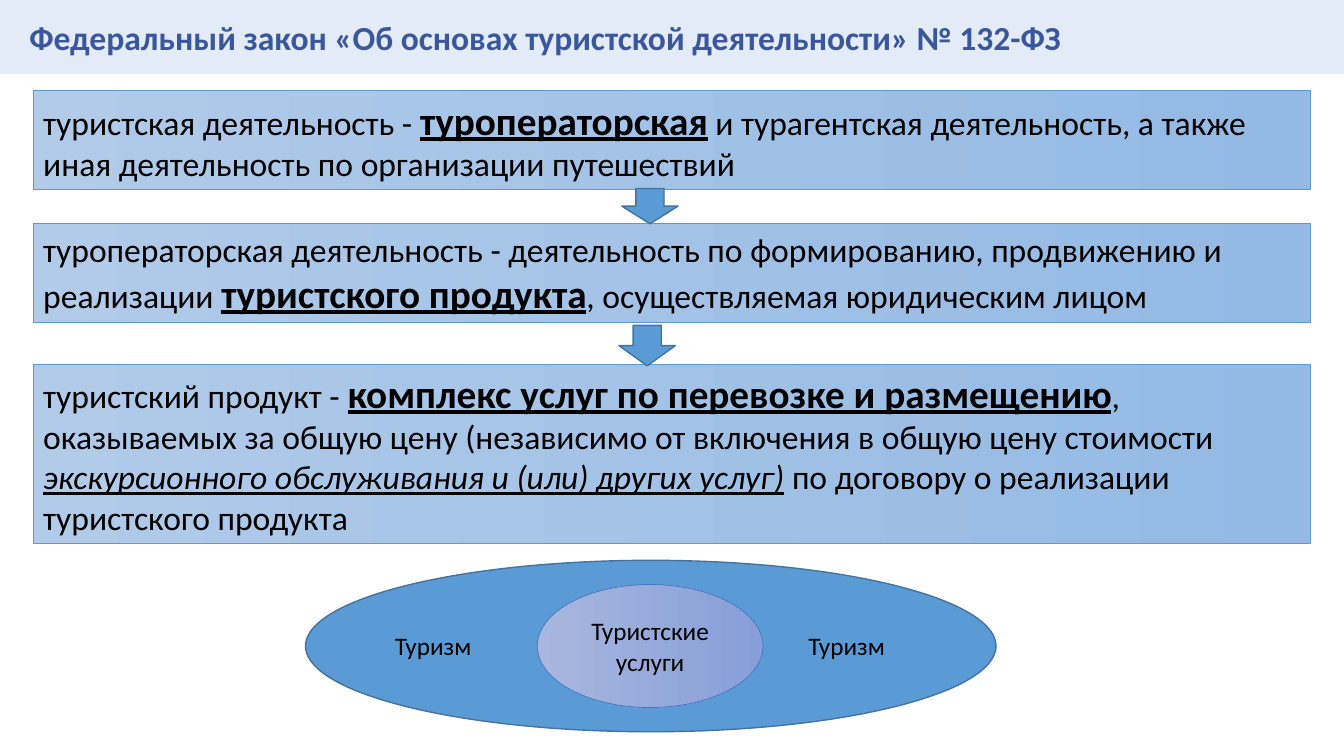
from pptx import Presentation
from pptx.dml.color import RGBColor
from pptx.enum.shapes import MSO_SHAPE
from pptx.enum.text import MSO_ANCHOR, MSO_AUTO_SIZE, PP_ALIGN
from pptx.util import Cm, Pt

# Content
TITLE = "Федеральный закон «Об основах туристской деятельности» № 132-ФЗ"
# Definitions: top, height, runs of (text, style); sizes in cm
DEFINITIONS = [
    (2.29, 2.49, [
        ("туристская деятельность - ", "plain"),
        ("туроператорская", "key"),
        (" и турагентская деятельность, а также иная деятельность "
         "по организации путешествий", "plain")]),
    (5.64, 2.49, [
        ("туроператорская деятельность - деятельность по формированию, "
         "продвижению и реализации ", "plain"),
        ("туристского продукта", "key"),
        (", осуществляемая юридическим лицом", "plain")]),
    (9.17, 4.52, [
        ("туристский продукт - ", "plain"),
        ("комплекс услуг по перевозке и размещению", "key"),
        (", оказываемых за общую цену (независимо от включения "
         "в общую цену стоимости ", "plain"),
        ("экскурсионного обслуживания и (или) других услуг)", "aside"),
        (" по договору о реализации туристского продукта", "plain")]),
]
ARROWS = [(15.67, 4.75, 1.42, 0.89), (15.6, 8.2, 1.42, 1.02)]
TOURISM_OVAL = (7.7, 14.12, 17.4, 4.32)
SERVICES_OVAL = (13.54, 14.73, 5.69, 3.1)
SERVICES = "Туристские услуги"
TOURISM = "Туризм"
TOURISM_LEFTS = [9.7, 20.12]

FONT = "Calibri"
STYLES = {
    "plain": dict(size=24),
    "key": dict(size=28, bold=True, underline=True),
    "aside": dict(size=24, italic=True, underline=True),
}
COLORS = {
    "header": "E3EBF9", "title": "3A579B", "text": "000000",
    "blue": "5B9BD5", "blue_edge": "43739E",
    "box_from": "B1CBE9", "box_to": "93B9E4",
    "oval_from": "A8B7DF", "oval_to": "889ED7", "oval_edge": "4472C4",
}


def rgb(name):
    return RGBColor.from_string(COLORS[name])


def add_figure(kind, box, fill, edge, width=1):
    """Add a preset shape; fill is one colour name or a (from, to) pair."""
    sp = slide.shapes.add_shape(kind, *map(Cm, box))
    sp.shadow.inherit = False
    if isinstance(fill, tuple):
        sp.fill.gradient()
        sp.fill.gradient_angle = 0
        for stop, name in zip(sp.fill.gradient_stops, fill):
            stop.color.rgb = rgb(name)
            stop.position = fill.index(name)
    else:
        sp.fill.solid()
        sp.fill.fore_color.rgb = rgb(fill)
    sp.line.color.rgb = rgb(edge)
    sp.line.width = Pt(width)
    return sp


def add_run(p, text, size, color="text", **style):
    r = p.add_run()
    r.text = text
    r.font.name = FONT
    r.font.size = Pt(size)
    r.font.color.rgb = rgb(color)
    for name, value in style.items():
        setattr(r.font, name, value)


prs = Presentation()
prs.slide_width, prs.slide_height = Cm(33.87), Cm(19.05)
slide = prs.slides.add_slide(prs.slide_layouts[6])

# Header band
sp = add_figure(MSO_SHAPE.RECTANGLE, (0, 0, 33.87, 1.85), "header", "header")
sp.text_frame.margin_left = Cm(0.74)
p = sp.text_frame.paragraphs[0]
p.alignment = PP_ALIGN.LEFT
add_run(p, TITLE, 24, "title", bold=True)

# Definitions
for top, height, runs in DEFINITIONS:
    sp = add_figure(MSO_SHAPE.RECTANGLE, (0.84, top, 32.18, height),
                    ("box_from", "box_to"), "blue", 0.5)
    tf = sp.text_frame
    tf.vertical_anchor = MSO_ANCHOR.TOP
    tf.auto_size = MSO_AUTO_SIZE.SHAPE_TO_FIT_TEXT
    p = tf.paragraphs[0]
    p.alignment = PP_ALIGN.LEFT
    for text, style in runs:
        add_run(p, text, **STYLES[style])

# Arrows between definitions
for box in ARROWS:
    add_figure(MSO_SHAPE.DOWN_ARROW, box, "blue", "blue_edge")

# Tourism and tourist services
add_figure(MSO_SHAPE.OVAL, TOURISM_OVAL, "blue", "blue_edge")
sp = add_figure(MSO_SHAPE.OVAL, SERVICES_OVAL,
                ("oval_from", "oval_to"), "oval_edge", 0.5)
p = sp.text_frame.paragraphs[0]
p.alignment = PP_ALIGN.CENTER
add_run(p, SERVICES, 18)
for left in TOURISM_LEFTS:
    tf = slide.shapes.add_textbox(Cm(left), Cm(15.77), Cm(2.46), Cm(1.02)).text_frame
    tf.word_wrap = False
    tf.auto_size = MSO_AUTO_SIZE.SHAPE_TO_FIT_TEXT
    add_run(tf.paragraphs[0], TOURISM, 18)

prs.save("out.pptx")
